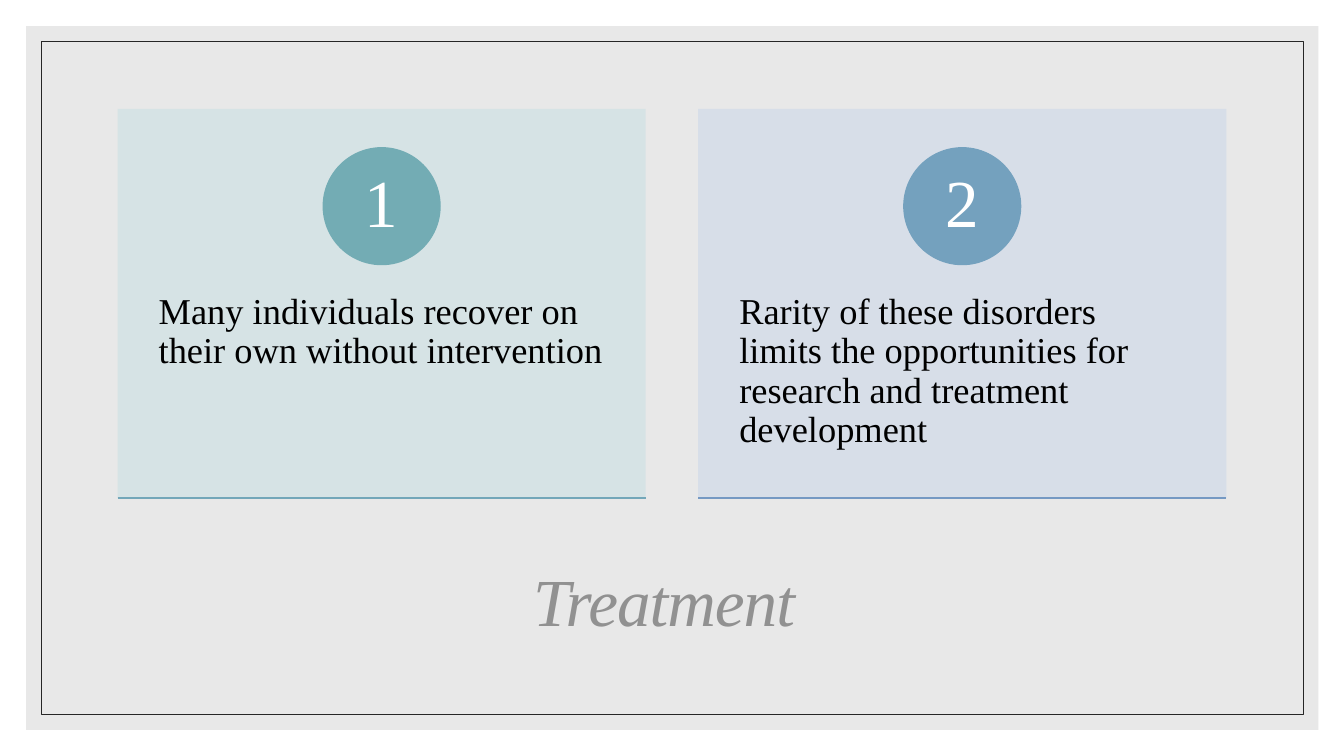
from lxml import etree
from pptx import Presentation
from pptx.dml.color import RGBColor
from pptx.enum.shapes import MSO_CONNECTOR as CONN, MSO_SHAPE as SHAPE
from pptx.enum.text import MSO_ANCHOR as ANCHOR, MSO_AUTO_SIZE as AUTO, PP_ALIGN as ALIGN
from pptx.oxml.ns import qn
from pptx.util import Pt

FONT = "Times New Roman"
WIDTH, HEIGHT = 960, 540
CARDS = [
    ("1", "Many individuals recover on their own without intervention",
     "D5E3E5", "73ACB4", "73A7B9"),
    ("2", "Rarity of these disorders limits the opportunities for research and treatment development",
     "D6DEE9", "74A1BE", "7599C3"),
]


def rgb(color):
    return RGBColor.from_string(color)


def set_alpha(fill_format, percent):
    color = fill_format._xPr.find(qn("a:solidFill"))[0]
    etree.SubElement(color, qn("a:alpha")).set("val", str(percent * 1000))


def add_box(s, kind, x, y, w, h, fill=None, line=None, weight=1, alpha=100):
    sp = s.shapes.add_shape(kind, Pt(x), Pt(y), Pt(w), Pt(h))
    sp.shadow.inherit = False
    if fill:
        sp.fill.solid()
        sp.fill.fore_color.rgb = rgb(fill)
        if alpha < 100:
            set_alpha(sp.fill, alpha)
    else:
        sp.fill.background()
    if line:
        sp.line.color.rgb = rgb(line)
        sp.line.width = Pt(weight)
    else:
        sp.line.fill.background()
    return sp


def write(sp, text, size, color, align, anchor, inset_x, inset_y):
    tf = sp.text_frame
    tf.text = text
    tf.word_wrap = True
    tf.auto_size = AUTO.NONE
    tf.vertical_anchor = anchor
    tf.margin_left = tf.margin_right = Pt(inset_x)
    tf.margin_top = tf.margin_bottom = Pt(inset_y)
    p = tf.paragraphs[0]
    p.alignment = align
    p.line_spacing = 0.9
    p.space_before = Pt(0)
    r = p.runs[0]
    r.font.name = FONT
    r.font.size = Pt(size)
    r.font.color.rgb = rgb(color)
    return r


def add_frame(s, x, y, w, h):
    add_box(s, SHAPE.RECTANGLE, x, y, w, h, "D9D9D9", alpha=60)
    gap = 10.8
    add_box(s, SHAPE.RECTANGLE, x + gap, y + gap, w - 2 * gap, h - 2 * gap,
            line="262626", weight=0.5)


def add_title(s, text, x, y, w, h):
    title = s.shapes.title
    title.left, title.top, title.width, title.height = Pt(x), Pt(y), Pt(w), Pt(h)
    r = write(title, text, 48, "262626", ALIGN.CENTER, ANCHOR.MIDDLE, 7.2, 3.6)
    r.font.italic = True
    r.font._element.set("spc", "-70")


def add_card(s, card, x, y, w, h):
    number, text, tint, accent, rule = card
    add_box(s, SHAPE.RECTANGLE, x, y, w, h, tint, alpha=90)

    body = s.shapes.add_textbox(Pt(x), Pt(y + 0.38 * h), Pt(w), Pt(0.6 * h))
    write(body, text, 26, "000000", ALIGN.LEFT, ANCHOR.TOP, 29.4, 26)

    d = 0.3 * h
    circle = add_box(s, SHAPE.OVAL, x + (w - d) / 2, y + 0.1 * h, d, d, accent, accent)
    write(circle, number, 48, "FFFFFF", ALIGN.CENTER, ANCHOR.MIDDLE, 6.5, 1)

    line = s.shapes.add_connector(CONN.STRAIGHT, Pt(x), Pt(y + h), Pt(x + w), Pt(y + h))
    line.line.color.rgb = rgb(rule)
    line.line.width = Pt(1)
    etree.SubElement(line._element.spPr, qn("a:effectLst"))


def add_cards(s, cards, x, y, w, h, gap):
    card_w = (w - gap * (len(cards) - 1)) / len(cards)
    for i, card in enumerate(cards):
        add_card(s, card, x + i * (card_w + gap), y, card_w, h)


def main():
    prs = Presentation()
    prs.slide_width, prs.slide_height = Pt(WIDTH), Pt(HEIGHT)
    s = prs.slides.add_slide(prs.slide_layouts[5])
    s.background.fill.solid()
    s.background.fill.fore_color.rgb = rgb("FFFFFF")
    add_frame(s, 18.7, 18.7, 923, 502.6)
    add_title(s, "Treatment ", 84, 378, 792, 108)
    add_cards(s, CARDS, 84, 77.8, 792, 278, 37.4)
    prs.save("out.pptx")


if __name__ == "__main__":
    main()
